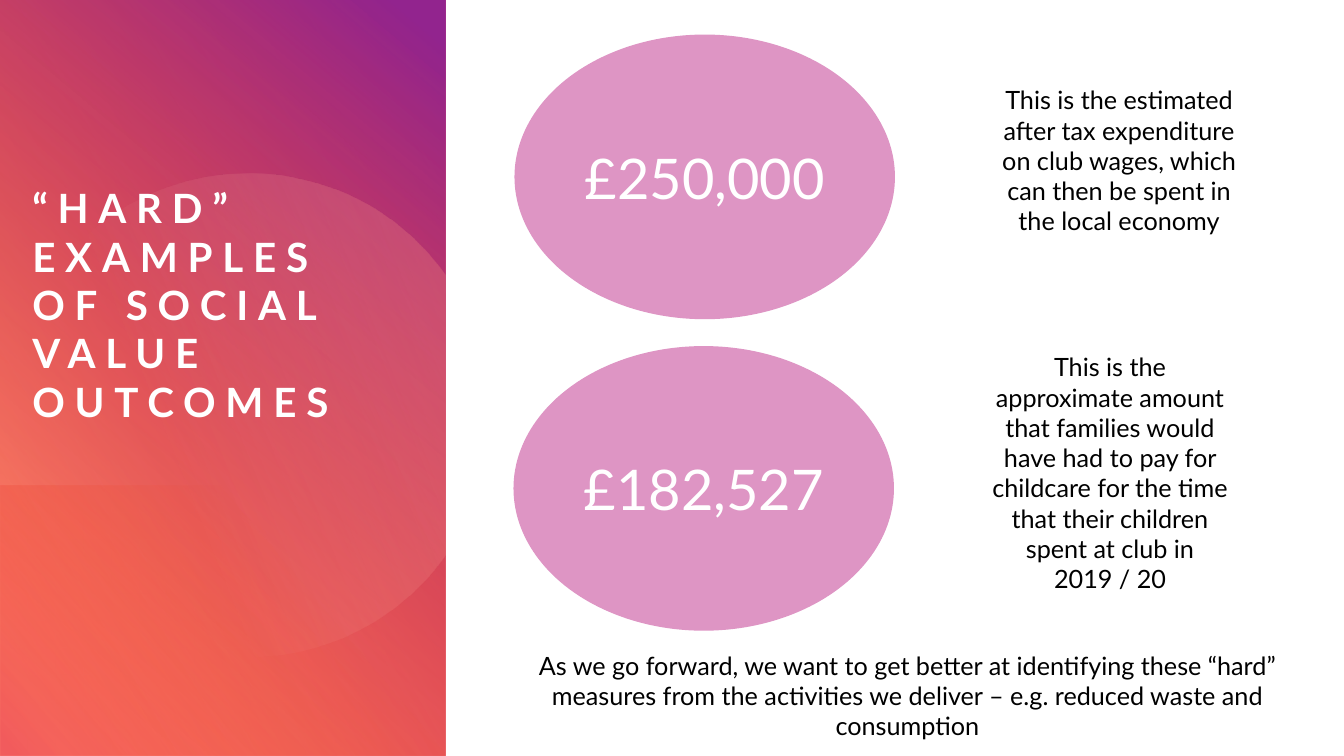
import pptx
import pptx.dml.color
import pptx.enum.shapes
import pptx.enum.text
import pptx.oxml.ns
import pptx.util
from lxml import etree

Inches = pptx.util.Inches
Anchor = pptx.enum.text.MSO_ANCHOR
Align = pptx.enum.text.PP_ALIGN
Preset = pptx.enum.shapes.MSO_SHAPE

COLOURS = {
    "white": "FFFFFF", "black": "000000", "pink": "DE95C4",
    "coral": "FF907A", "red": "DA002F", "orange": "FE4A00",
    "purple": "92248E", "peach": "FFDBCC",
}


def rgb(name):
    return pptx.dml.color.RGBColor.from_string(COLOURS[name])


def write(shape, text, size=18, colour="black", align=Align.CENTER,
          anchor=Anchor.TOP, bold=False, spacing=0, margin=None):
    frame = shape.text_frame
    frame.word_wrap = True
    frame.auto_size = pptx.enum.text.MSO_AUTO_SIZE.NONE
    frame.vertical_anchor = anchor
    if margin is not None:
        frame.margin_left = frame.margin_right = Inches(margin)
        frame.margin_top = frame.margin_bottom = Inches(margin)
    paragraph = frame.paragraphs[0]
    paragraph.alignment = align
    run = paragraph.add_run()
    run.text = text
    run.font.name = "Lato"
    run.font.size = pptx.util.Pt(size)
    run.font.bold = bold
    run.font.color.rgb = rgb(colour)
    if spacing:
        run.font._element.set("spc", str(spacing * 100))


deck = pptx.Presentation()
deck.slide_width = Inches(13.33)
deck.slide_height = Inches(7.5)
slide = deck.slides.add_slide(deck.slide_layouts[5])
shapes = slide.shapes

# Left panel: layered rectangles turned by 90 degrees
# Gradient stops are (position %, colour, opacity %)
layers = []
for box, flipped, angle, stops in [
    ((-1.54, 1.54, 7.5, 4.42), True, 60, [(8, "coral", 100), (100, "red", 72)]),
    ((-1.54, 1.54, 7.5, 4.42), True, 40, [(0, "orange", 0), (96, "purple", 100)]),
    ((0.87, 3.96, 2.68, 4.4), False, 130, [(2, "red", 35), (67, "orange", 0)]),
]:
    panel = shapes.add_shape(Preset.RECTANGLE, *map(Inches, box))
    panel.rotation = 90
    if flipped:
        panel._element.spPr.xfrm.set("flipH", "1")
    layers.append((panel, angle, stops))

# Circle cut off by the edge of the panel, its arcs drawn as short segments
arcs = [
    [(2.47, 1.72), (2.62, 1.72), (2.79, 1.73), (2.95, 1.77)],
    [(2.95, 1.77), (3.52, 1.88), (3.99, 2.19), (4.33, 2.61)],
    [(4.42, 2.73), (4.42, 2.73), (4.42, 5.5), (4.42, 5.5)],
    [(4.3, 5.66), (3.75, 6.31), (2.87, 6.65), (1.98, 6.46)],
    [(1.98, 6.46), (0.68, 6.19), (-0.15, 4.93), (0.12, 3.63)],
    [(0.12, 3.63), (0.35, 2.5), (1.35, 1.71), (2.47, 1.72)],
]
STEPS = 16
outline = []
for arc in arcs:
    for step in range(STEPS + 1):
        t = step / STEPS
        weights = [(1 - t) ** 3, 3 * t * (1 - t) ** 2, 3 * t * t * (1 - t), t ** 3]
        outline.append(tuple(
            Inches(sum(w * point[axis] for w, point in zip(weights, arc)))
            for axis in (0, 1)))
builder = shapes.build_freeform(*outline[0])
builder.add_line_segments(outline[1:], close=True)
circle = builder.convert_to_shape()
layers.append((circle, 21.6, [(39, "peach", 0), (100, "coral", 29)]))

# Gradients of the panel layers
for layer, angle, stops in layers:
    layer.shadow.inherit = False
    layer.line.fill.background()
    layer.fill.gradient()
    layer.fill.gradient_angle = angle
    for stop, (position, colour, opacity) in zip(layer.fill.gradient_stops, stops):
        stop.position = position / 100
        stop.color.rgb = rgb(colour)
        if opacity < 100:
            tint = stop._gs.find(pptx.oxml.ns.qn("a:srgbClr"))
            alpha = etree.SubElement(tint, pptx.oxml.ns.qn("a:alpha"))
            alpha.set("val", str(opacity * 1000))

# Title, brought in front of the panel
title = shapes.title
title.left, title.top, title.width, title.height = map(
    Inches, (0.32, 2.89, 3.44, 1.33))
write(title, "“HARD” EXAMPLES OF SOCIAL VALUE OUTCOMES", size=28.8, colour="white",
      align=Align.LEFT, anchor=Anchor.BOTTOM, bold=True, spacing=7, margin=0)
shapes._spTree.append(title._element)

# Amounts
for left, top, amount in [(5.11, 0.35, "£250,000"), (5.1, 3.44, "£182,527")]:
    oval = shapes.add_shape(
        Preset.OVAL, Inches(left), Inches(top), Inches(3.76), Inches(2.81))
    oval.shadow.inherit = False
    oval.fill.solid()
    oval.fill.fore_color.rgb = rgb("pink")
    oval.line.color.rgb = rgb("pink")
    oval.line.width = pptx.util.Pt(1)
    write(oval, amount, size=40, colour="white", anchor=Anchor.MIDDLE)

# Explanations and closing remark
for box, remark in [
    ((9.77, 0.79, 2.66, 1.92),
     "This is the estimated after tax expenditure on club wages, which can then "
     "be spent in the local economy"),
    ((9.68, 3.44, 2.66, 2.52),
     "This is the approximate amount that families would have had to pay for "
     "childcare for the time that their children spent at club in 2019 / 20"),
    ((5.11, 6.4, 7.78, 1.01),
     "As we go forward, we want to get better at identifying these “hard” measures "
     "from the activities we deliver – e.g. reduced waste and consumption"),
]:
    write(shapes.add_textbox(*map(Inches, box)), remark)

deck.save("out.pptx")
